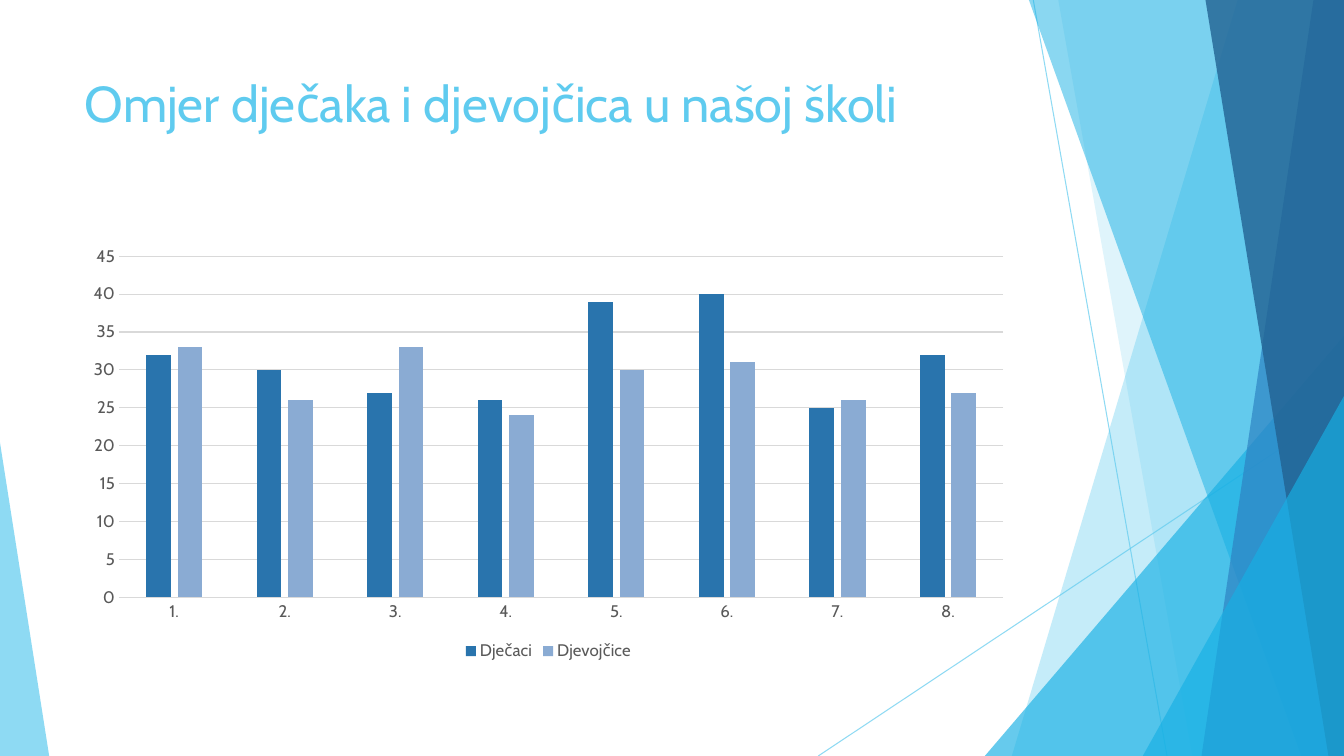
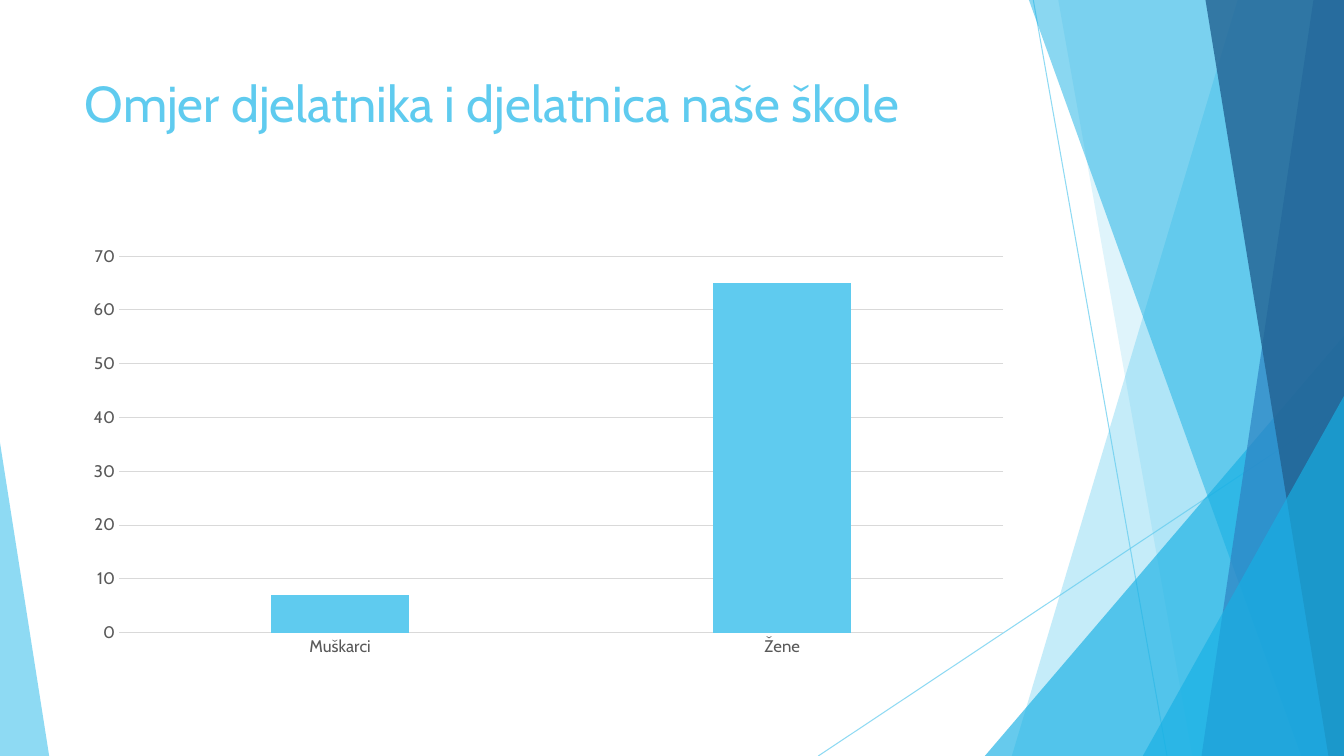
from lxml.etree import SubElement
from pptx import Presentation
from pptx.chart.data import CategoryChartData
from pptx.dml.color import RGBColor
from pptx.enum.chart import XL_CHART_TYPE, XL_LEGEND_POSITION, XL_TICK_MARK
from pptx.enum.shapes import MSO_CONNECTOR, MSO_SHAPE
from pptx.enum.text import MSO_ANCHOR, MSO_AUTO_SIZE, PP_ALIGN
from pptx.oxml.ns import qn
from pptx.util import Cm, Pt

COLOURS = {
    "sky": "5FCBEF",
    "cyan": "17B0E4",
    "blue": "2E83C3",
    "navy": "226292",
    "boys": "2974AD",
    "girls": "8AABD3",
    "label": "595959",
    "grid": "D9D9D9",
}
PAGE_WIDTH, PAGE_HEIGHT = 33.87, 19.05
TITLE_BOX = (1.88, 1.7, 23.88, 3.66)
CHART_BOX = (1.88, 5.99, 23.88, 10.77)
TITLE_FONT = {"name": "Cabin", "size": Pt(36), "bold": False}
LABEL_FONT = {"name": "Cabin", "size": Pt(12), "bold": False}

# Facets from back to front: kind, geometry in cm, colour, opacity in percent
# band: top left x, bottom left x; triangle: left, width, height, apex
FACETS = [
    ("band", (31.19, 25.5), "sky", 36),
    ("band", (26.67, 30.05), "sky", 20),
    ("triangle", (24.82, 9.05, 10.59, 1), "cyan", 66),
    ("band", (25.93, 32.79), "cyan", 50),
    ("band", (33.1, 30.28), "blue", 70),
    ("band", (30.38, 33.48), "navy", 80),
    ("triangle", (28.8, 5.07, 9.07, 1), "cyan", 66),
    ("triangle", (0, 1.24, 7.9, 0), "sky", 70),
]
RAYS = [
    (26.04, 0, 29.41, PAGE_HEIGHT),
    (PAGE_WIDTH, 10.24, 20.62, PAGE_HEIGHT),
]


def colour(name):
    return RGBColor.from_string(COLOURS[name])


def set_attributes(target, values):
    for name, value in values.items():
        setattr(target, name, value)


def set_font(font, values, colour_name):
    set_attributes(font, values)
    font.color.rgb = colour(colour_name)


def set_opacity(shape, percent):
    for node in shape.element.iter(qn("a:srgbClr")):
        SubElement(node, qn("a:alpha")).set("val", str(percent * 1000))


def add_ray(group, ends):
    ray = group.shapes.add_connector(MSO_CONNECTOR.STRAIGHT, *map(Cm, ends))
    ray.line.color.rgb = colour("sky")
    ray.line.width = Pt(0.75)
    set_opacity(ray, 70)
    SubElement(ray.element.spPr, qn("a:effectLst"))


def add_band(group, top_x, bottom_x):
    """Outline a band that runs to the right edge of the page."""
    builder = group.shapes.build_freeform(Cm(top_x), 0)
    corners = [(PAGE_WIDTH, 0), (PAGE_WIDTH, PAGE_HEIGHT), (bottom_x, PAGE_HEIGHT)]
    builder.add_line_segments([(Cm(x), Cm(y)) for x, y in corners], close=True)
    return builder.convert_to_shape()


def add_triangle(group, left, width, height, apex):
    """Stand a right-angled triangle on the bottom edge of the page."""
    box = (left, PAGE_HEIGHT - height, width, height)
    triangle = group.shapes.add_shape(MSO_SHAPE.ISOSCELES_TRIANGLE, *map(Cm, box))
    triangle.adjustments[0] = apex
    return triangle


def add_facets_to_layout(layout, page):
    """Draw the facets on a page, then move them to its layout."""
    group = page.shapes.add_group_shape()
    for ends in RAYS:
        add_ray(group, ends)
    builders = {"band": add_band, "triangle": add_triangle}
    for kind, geometry, colour_name, opacity in FACETS:
        facet = builders[kind](group, *geometry)
        facet.shadow.inherit = False
        facet.fill.solid()
        facet.fill.fore_color.rgb = colour(colour_name)
        facet.line.fill.background()
        set_opacity(facet, opacity)
    for number, node in enumerate(group.element.iter(qn("p:cNvPr")), start=100):
        node.set("id", str(number))
    layout.shapes.element.insert(2, group.element)


def place_title(page, box, text):
    title = page.shapes.title
    set_attributes(title, dict(zip(("left", "top", "width", "height"), map(Cm, box))))
    set_attributes(title.text_frame, {
        "text": text,
        "word_wrap": True,
        "auto_size": MSO_AUTO_SIZE.NONE,
        "vertical_anchor": MSO_ANCHOR.TOP,
    })
    para = title.text_frame.paragraphs[0]
    para.alignment = PP_ALIGN.LEFT
    set_font(para.runs[0].font, TITLE_FONT, "sky")


def format_axes(chart, maximum, step):
    for axis in (chart.category_axis, chart.value_axis):
        axis.major_tick_mark = axis.minor_tick_mark = XL_TICK_MARK.NONE
        set_font(axis.tick_labels.font, LABEL_FONT, "label")
    values = chart.value_axis
    set_attributes(values, {
        "minimum_scale": 0,
        "maximum_scale": maximum,
        "major_unit": step,
        "has_major_gridlines": True,
    })
    values.format.line.fill.background()
    for line in (values.major_gridlines.format.line, chart.category_axis.format.line):
        line.color.rgb = colour("grid")
        line.width = Pt(0.75)


def place_chart(page, box, categories, series, maximum, step):
    data = CategoryChartData()
    data.categories = categories
    for name, values, _ in series:
        data.add_series(name, values)
    chart = page.shapes.add_chart(
        XL_CHART_TYPE.COLUMN_CLUSTERED, *map(Cm, box), data).chart
    chart.has_title = False
    set_font(chart.font, LABEL_FONT, "label")
    format_axes(chart, maximum, step)

    # Columns
    plot = chart.plots[0]
    set_attributes(plot, {"gap_width": 219, "overlap": -27, "vary_by_categories": False})
    for columns, (_, _, colour_name) in zip(plot.series, series):
        columns.invert_if_negative = False
        columns.format.fill.solid()
        columns.format.fill.fore_color.rgb = colour(colour_name)

    # Legend, only where there are series to tell apart
    chart.has_legend = len(series) > 1
    if chart.has_legend:
        chart.legend.position = XL_LEGEND_POSITION.BOTTOM
        chart.legend.include_in_layout = False
        set_font(chart.legend.font, LABEL_FONT, "label")


PAGES = [
    {
        "title": "Omjer dječaka i djevojčica u našoj školi",
        "categories": [f"{grade}." for grade in range(1, 9)],
        "series": [
            ("Dječaci", (32, 30, 27, 26, 39, 40, 25, 32), "boys"),
            ("Djevojčice", (33, 26, 33, 24, 30, 31, 26, 27), "girls"),
        ],
        "maximum": 45,
        "step": 5,
    },
    {
        "title": "Omjer djelatnika i djelatnica naše škole",
        "categories": ["Muškarci", "Žene"],
        "series": [("Series 1", (7, 65), "sky")],
        "maximum": 70,
        "step": 10,
    },
]


def add_chart_page(deck, layout, title, **chart_values):
    page = deck.slides.add_slide(layout)
    place_title(page, TITLE_BOX, title)
    place_chart(page, CHART_BOX, **chart_values)
    return page


def main():
    deck = Presentation()
    deck.slide_width, deck.slide_height = Cm(PAGE_WIDTH), Cm(PAGE_HEIGHT)
    layout = deck.slide_layouts.get_by_name("Title Only")
    pages = [add_chart_page(deck, layout, **values) for values in PAGES]
    add_facets_to_layout(layout, pages[0])
    deck.save("out.pptx")


if __name__ == "__main__":
    main()
